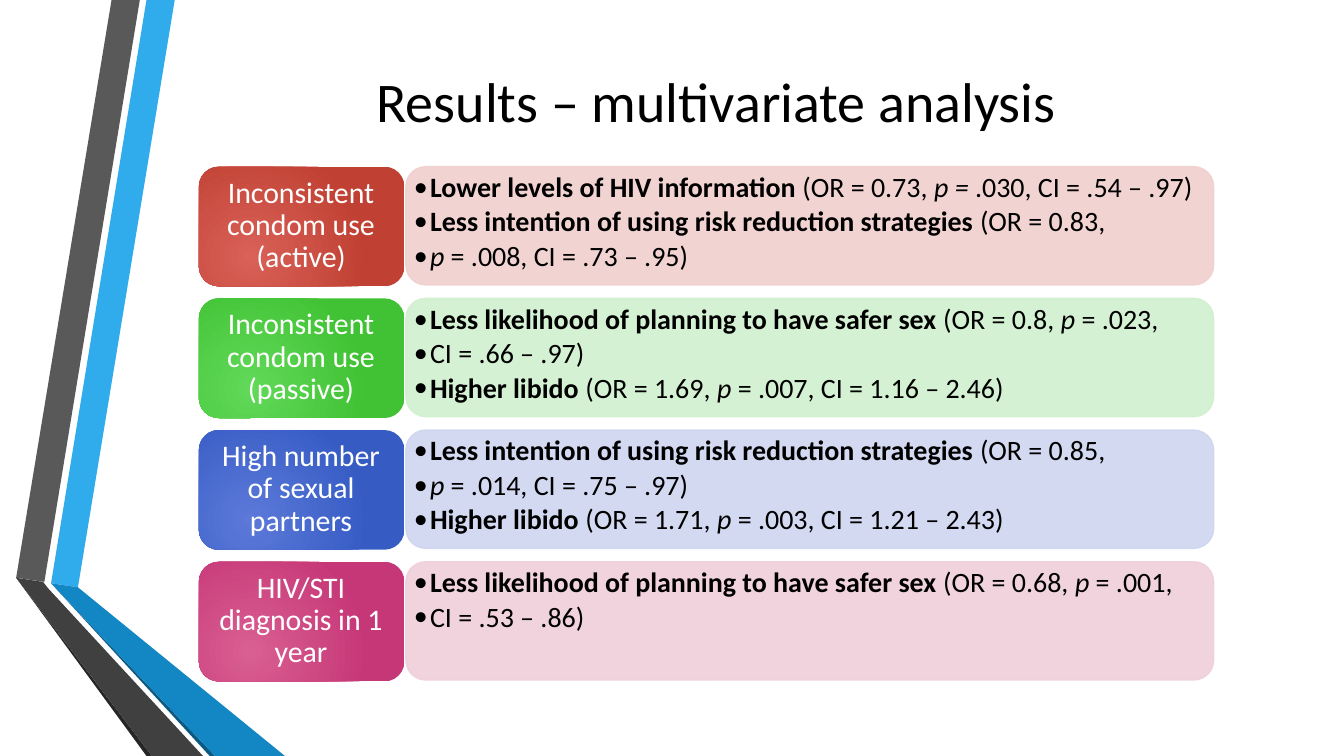
import pptx
import pptx.dml.color
import pptx.enum.dml
import pptx.enum.shapes
import pptx.enum.text
import pptx.oxml
import pptx.oxml.ns
import pptx.util
from dataclasses import dataclass
from typing import NamedTuple

Inches = pptx.util.Inches
Pt = pptx.util.Pt
RGBColor = pptx.dml.color.RGBColor
Shape = pptx.enum.shapes.MSO_SHAPE
Align = pptx.enum.text.PP_ALIGN
Anchor = pptx.enum.text.MSO_ANCHOR

FONT = "Calibri"
BLACK = RGBColor(0x00, 0x00, 0x00)
WHITE = RGBColor(0xFF, 0xFF, 0xFF)
SKY = RGBColor(0x30, 0xAC, 0xEC)
BLUE = RGBColor(0x12, 0x87, 0xC3)
NAVY = RGBColor(0x0C, 0x5A, 0x82)
GRAY = RGBColor(0x59, 0x59, 0x59)
DARK = RGBColor(0x40, 0x40, 0x40)
COAL = RGBColor(0x26, 0x26, 0x26)

WIDE = 10
HIGH = WIDE * 9 / 16
TOP, STEP = 1.24, 0.98
MAIN = pptx.oxml.ns.nsdecls("a")


class Part(NamedTuple):
    text: str
    bold: bool = False
    italic: bool = False


class Band(NamedTuple):
    color: RGBColor
    points: list[tuple[float, float]]


class Box(NamedTuple):
    left: float
    top: float
    width: float
    height: float


@dataclass
class Row:
    label: str
    light: RGBColor
    deep: RGBColor
    pale: RGBColor
    lines: list[list[Part]]


P = Part("p", italic=True)
INTENT = Part("Less intention of using risk reduction strategies ", bold=True)
PLAN = Part("Less likelihood of planning to have safer sex ", bold=True)
LIBIDO = Part("Higher libido ", bold=True)

BANDS = [
    Band(SKY, [(0.38, 4.34), (0.58, 4.37), (1.3, 0), (1.09, 0)]),
    Band(GRAY, [(1.04, 0), (0.83, 0), (0.12, 4.3), (0.33, 4.33)]),
    Band(COAL, [(0.12, 4.3), (1.09, HIGH), (1.13, HIGH)]),
    Band(NAVY, [(0.38, 4.34), (1.56, HIGH), (1.6, HIGH)]),
    Band(BLUE, [(0.38, 4.34), (1.6, HIGH), (2.12, HIGH), (0.58, 4.37)]),
    Band(DARK, [(1.51, HIGH), (0.36, 4.38), (0.32, 4.33), (0.12, 4.3), (1.13, HIGH)]),
]

ROWS = [
    Row("Inconsistent condom use (active)",
        RGBColor(0xD9, 0x61, 0x57), RGBColor(0xC0, 0x40, 0x33), RGBColor(0xF0, 0xD0, 0xCE),
        [[Part("Lower levels of HIV information ", bold=True), Part("(OR = 0.73, "),
          Part("p = ", italic=True), Part(".030, CI = .54 – .97)")],
         [INTENT, Part("(OR = 0.83,")],
         [P, Part(" = .008, CI = .73 – .95)")]]),
    Row("Inconsistent condom use (passive)",
        RGBColor(0x62, 0xD9, 0x59), RGBColor(0x40, 0xC2, 0x34), RGBColor(0xD1, 0xF0, 0xCF),
        [[PLAN, Part("(OR = 0.8, "), P, Part(" = .023,")],
         [Part("CI = .66 – .97)")],
         [LIBIDO, Part("(OR = 1.69, "), P, Part(" = .007, CI = 1.16 – 2.46)")]]),
    Row("High number of sexual partners",
        RGBColor(0x5C, 0x79, 0xD9), RGBColor(0x36, 0x5C, 0xC4), RGBColor(0xCF, 0xD5, 0xF0),
        [[INTENT, Part("(OR = 0.85,")],
         [P, Part(" = .014, CI = .75 – .97)")],
         [LIBIDO, Part("(OR = 1.71, "), P, Part(" = .003, CI = 1.21 – 2.43)")]]),
    Row("HIV/STI diagnosis in 1 year",
        RGBColor(0xD9, 0x5F, 0x92), RGBColor(0xC6, 0x37, 0x77), RGBColor(0xF0, 0xCF, 0xDA),
        [[PLAN, Part("(OR = 0.68, "), P, Part(" = .001,")],
         [Part("CI = .53 – .86)")]]),
]


def place(box: Box) -> list[int]:
    return [Inches(side) for side in box]


def draw_band(slide, band: Band) -> None:
    points = [(Inches(x), Inches(y)) for x, y in band.points]
    pen = slide.shapes.build_freeform(*points[0])
    pen.add_line_segments(points[1:], close=True)
    shape = pen.convert_to_shape()
    shape.shadow.inherit = False
    shape.fill.solid()
    shape.fill.fore_color.rgb = band.color
    shape.line.fill.background()


def fade(color) -> None:
    tag = color.find(".//" + pptx.oxml.ns.qn("a:srgbClr"))
    tag.append(pptx.oxml.parse_xml(f'<a:alpha {MAIN} val="90000"/>'))


def draw_panel(slide, box: Box, color: RGBColor) -> None:
    shape = slide.shapes.add_shape(Shape.FLOWCHART_ALTERNATE_PROCESS, *place(box))
    shape.shadow.inherit = False
    shape.line.width = Pt(0.75)
    for fill in (shape.fill, shape.line.fill):
        fill.solid()
        fill.fore_color.rgb = color
    props = shape.fill._xPr
    fade(props.find(pptx.oxml.ns.qn("a:solidFill")))
    fade(props.find(pptx.oxml.ns.qn("a:ln")))


def draw_tile(slide, box: Box, light: RGBColor, deep: RGBColor) -> None:
    shape = slide.shapes.add_shape(Shape.ROUNDED_RECTANGLE, *place(box))
    shape.shadow.inherit = False
    shape.line.fill.background()
    shape.fill.gradient()
    for stop, color in zip(shape.fill.gradient_stops, (light, deep)):
        stop.color.rgb = color
    grad = shape.fill._xPr.find(pptx.oxml.ns.qn("a:gradFill"))
    line = grad.find(pptx.oxml.ns.qn("a:lin"))
    grad.replace(line, pptx.oxml.parse_xml(
        f'<a:path {MAIN} path="circle">'
        '<a:fillToRect l="50000" t="100000" r="100000" b="50000"/></a:path>'))


def add_frame(slide, box: Box, side: float, edge: float, anchor: Anchor):
    frame = slide.shapes.add_textbox(*place(box)).text_frame
    frame.word_wrap = True
    frame.vertical_anchor = anchor
    frame.margin_left = frame.margin_right = Inches(side)
    frame.margin_top = frame.margin_bottom = Inches(edge)
    return frame


def style(font, size: float, color: RGBColor) -> None:
    font.name = FONT
    font.size = Pt(size)
    font.color.rgb = color


def write_label(frame, text: str, size: float, color: RGBColor, space: float) -> None:
    frame.text = text
    para = frame.paragraphs[0]
    para.alignment = Align.CENTER
    para.line_spacing = space
    style(para.runs[0].font, size, color)


def write_lines(frame, lines: list[list[Part]]) -> None:
    for at, parts in enumerate(lines):
        para = frame.add_paragraph() if at else frame.paragraphs[0]
        props = para._p.get_or_add_pPr()
        props.set("marL", str(Inches(0.12)))
        props.set("indent", str(Inches(-0.12)))
        props.append(pptx.oxml.parse_xml(f'<a:buFont {MAIN} typeface="{FONT}"/>'))
        props.append(pptx.oxml.parse_xml(f'<a:buChar {MAIN} char="•"/>'))
        para.level = 1
        para.line_spacing = 0.9
        para.space_after = Pt(2.25)
        for part in parts:
            run = para.add_run()
            run.text = part.text
            style(run.font, 15, BLACK)
            run.font.bold = part.bold
            run.font.italic = part.italic


def draw_row(slide, row: Row, top: float) -> None:
    draw_panel(slide, Box(3.02, top, 6.01, 0.88), row.pale)
    write_lines(add_frame(slide, Box(3.07, top + 0.04, 5.93, 0.79), 0.01, 0.01, Anchor.TOP),
                row.lines)
    draw_tile(slide, Box(1.48, top, 1.53, 0.89), row.light, row.deep)
    write_label(add_frame(slide, Box(1.52, top + 0.04, 1.44, 0.8), 0.07, 0.03, Anchor.MIDDLE),
                row.label, 16, WHITE, 0.9)


def main() -> None:
    deck = pptx.Presentation()
    deck.slide_width, deck.slide_height = Inches(WIDE), Inches(HIGH)
    slide = deck.slides.add_slide(deck.slide_layouts[6])
    for band in BANDS:
        draw_band(slide, band)
    title = add_frame(slide, Box(1.22, 0.27, 8.22, 0.95), 0.1, 0.05, Anchor.MIDDLE)
    write_label(title, "Results – multivariate analysis", 30, BLACK, 1.0)
    for at, row in enumerate(ROWS):
        draw_row(slide, row, TOP + at * STEP)
    deck.save("out.pptx")


if __name__ == "__main__":
    main()
